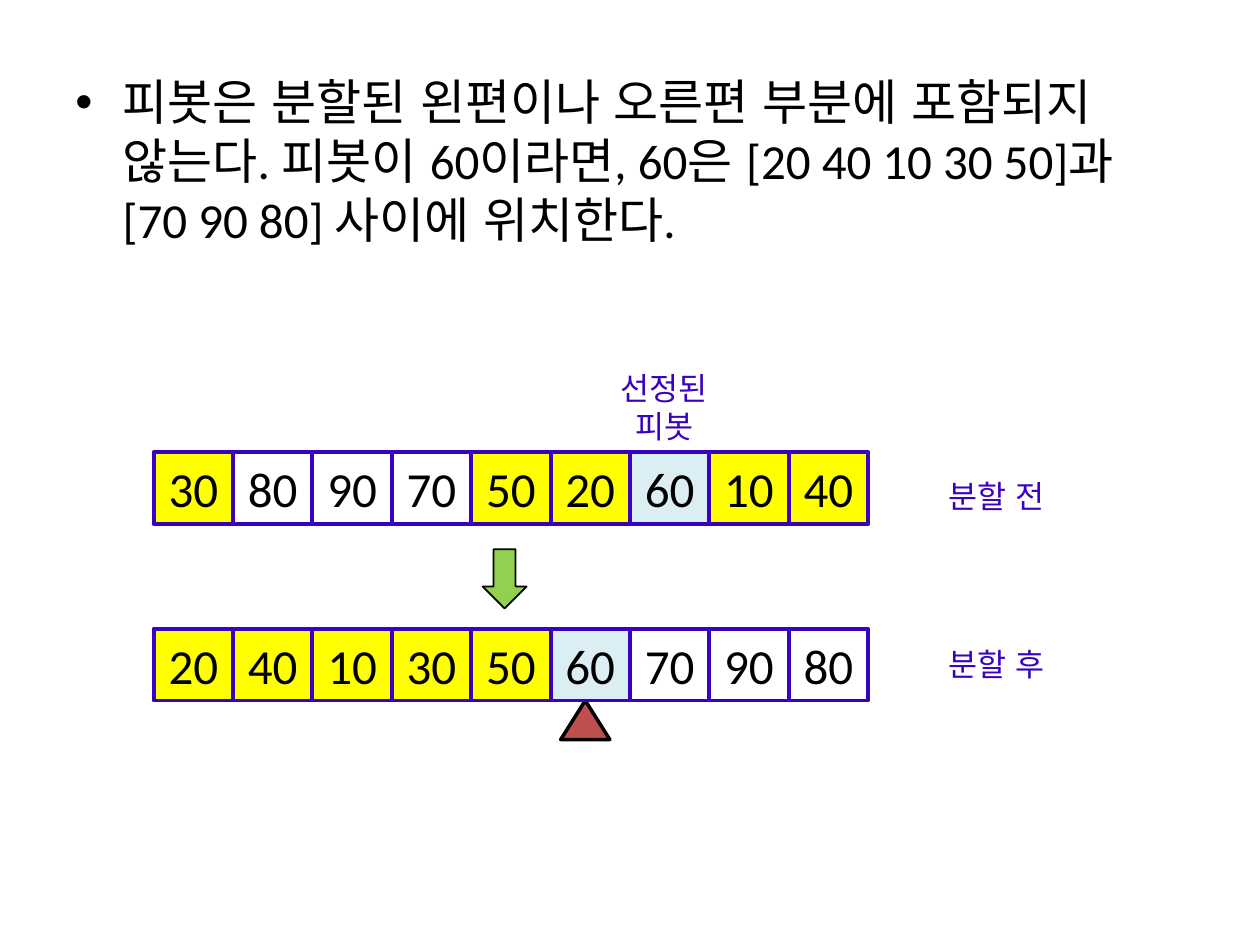
from lxml.etree import SubElement
from pptx import Presentation
from pptx.dml.color import RGBColor as RGB
from pptx.enum.lang import MSO_LANGUAGE_ID as LANG
from pptx.enum.shapes import MSO_SHAPE as SHAPE
from pptx.enum.text import MSO_ANCHOR as ANCHOR, PP_ALIGN as ALIGN
from pptx.oxml.ns import qn
from pptx.util import Pt

BLACK = RGB(0, 0, 0)
PURPLE = RGB(0x38, 0x02, 0xC0)
YELLOW = RGB(0xFF, 0xFF, 0x00)
PALE = RGB(0xDB, 0xEE, 0xF4)
GREEN = RGB(0x92, 0xD0, 0x50)
RED = RGB(0xC0, 0x50, 0x4D)

PIVOT = 60
LEFT, CELL, HIGH = 87.84, 45.36, 41.04

deck = Presentation()
deck.slide_width, deck.slide_height = Pt(720), Pt(540)
slide = deck.slides.add_slide(deck.slide_layouts[6])


def write(shape, text, size, color, align=ALIGN.CENTER):
    frame = shape.text_frame
    frame.word_wrap = True
    para = frame.paragraphs[0]
    para.alignment = align
    run = para.add_run()
    run.text = text
    run.font.name = "Calibri"
    run.font.size = Pt(size)
    run.font.color.rgb = color
    run.font.language_id = LANG.KOREAN
    return para


def draw(kind, box, fill, line, width):
    """Add a preset shape; a fill of None leaves it hollow."""
    shape = slide.shapes.add_shape(kind, *map(Pt, box))
    shape.shadow.inherit = False
    if fill is None:
        shape.fill.background()
    else:
        shape.fill.solid()
        shape.fill.fore_color.rgb = fill
    shape.line.color.rgb = line
    shape.line.width = Pt(width)
    return shape


# Bulleted explanation
body = slide.shapes.add_textbox(Pt(36), Pt(37.44), Pt(648), Pt(153.36))
para = write(
    body,
    "피봇은 분할된 왼편이나 오른편 부분에 포함되지 않는다. 피봇이 60이라면, "
    "60은 [20 40 10 30 50]과 [70 90 80] 사이에 위치한다.",
    28, BLACK, ALIGN.LEFT)
para.space_before = Pt(5.6)
props = para._p.get_or_add_pPr()
props.set("marL", str(Pt(27)))
props.set("indent", str(Pt(-27)))
SubElement(props, qn("a:buFont"), typeface="Arial")
SubElement(props, qn("a:buChar"), char="•")

# Markers
draw(SHAPE.ISOSCELES_TRIANGLE, (320.4, 400.32, 28.08, 22.32), RED, BLACK, 2)
draw(SHAPE.DOWN_ARROW, (275.76, 313.92, 25.2, 33.84), GREEN, BLACK, 1)

# Number rows before and after the split
rows = [
    (258.48, [30, 80, 90, 70, 50, 20, 60, 10, 40]),
    (359.28, [20, 40, 10, 30, 50, 60, 70, 90, 80]),
]
for top, values in rows:
    for col, value in enumerate(values):
        if value == PIVOT:
            fill = PALE
        else:
            fill = YELLOW if value < PIVOT else None
        box = (LEFT + col * CELL, top, CELL, HIGH)
        cell = draw(SHAPE.RECTANGLE, box, fill, PURPLE, 2.25)
        cell.text_frame.vertical_anchor = ANCHOR.MIDDLE
        write(cell, str(value), 28, BLACK)

# Labels
labels = [
    ("선정된피봇", (342.72, 207.36, 73.44, 51.12)),
    ("분할 전", (518.4, 269.28, 102.24, 28.8)),
    ("분할 후", (518.4, 365.04, 102.24, 28.8)),
]
for text, box in labels:
    write(slide.shapes.add_textbox(*map(Pt, box)), text, 18, PURPLE)

deck.save("out.pptx")
